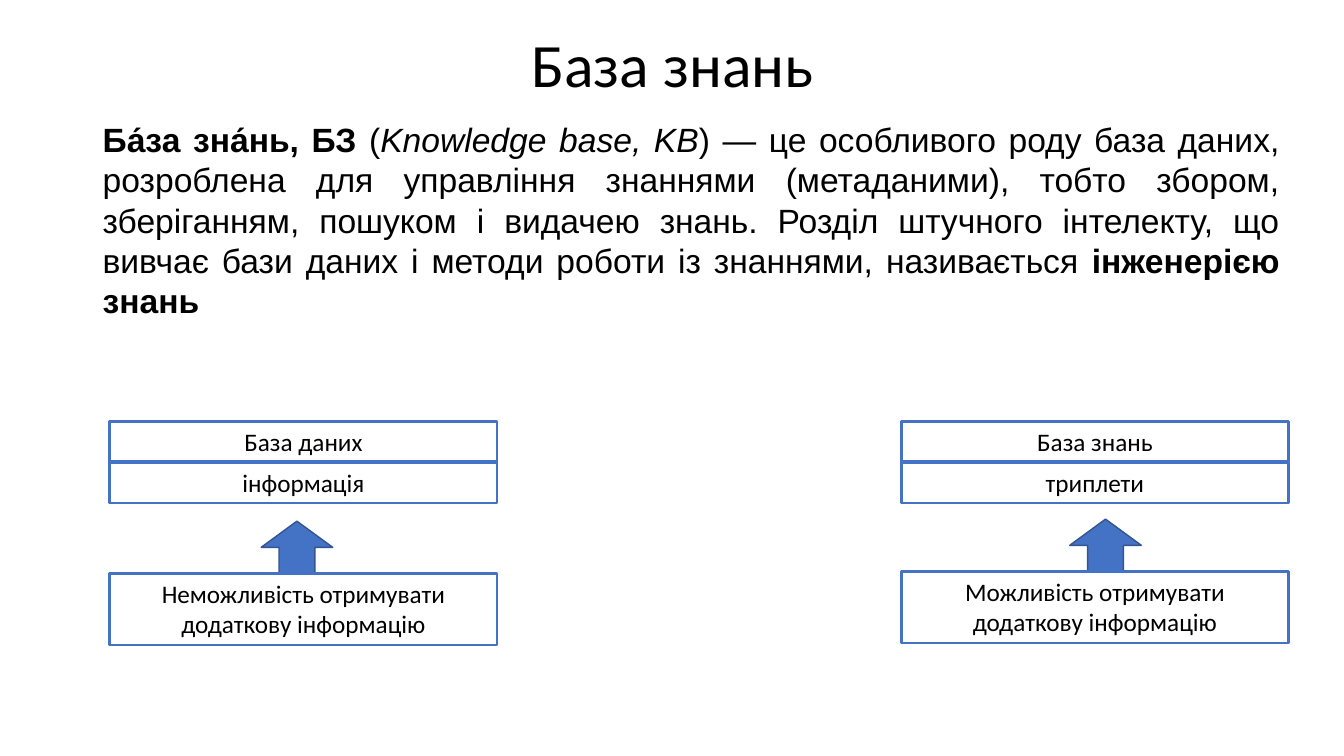
from dataclasses import dataclass

from pptx import Presentation
from pptx.dml.color import RGBColor
from pptx.enum.shapes import MSO_SHAPE
from pptx.enum.text import MSO_ANCHOR, MSO_AUTO_SIZE, PP_ALIGN
from pptx.shapes.autoshape import Shape
from pptx.slide import Slide
from pptx.util import Emu, Pt

RECTANGLE, UP_ARROW = MSO_SHAPE.RECTANGLE, MSO_SHAPE.UP_ARROW
CENTER, JUSTIFY = PP_ALIGN.CENTER, PP_ALIGN.JUSTIFY
TOP, MIDDLE = MSO_ANCHOR.TOP, MSO_ANCHOR.MIDDLE
FIT_SHAPE = MSO_AUTO_SIZE.SHAPE_TO_FIT_TEXT
NO_FIT = MSO_AUTO_SIZE.NONE

EMU_PER_PX = 9144  # 100 px to the inch
BLACK, BLUE, DARK_BLUE = "000000", "4472C4", "325491"

# Column geometry, in px
BOX_WIDTH, ROW_HEIGHT, NOTE_HEIGHT = 384, 40, 71
ROWS_TOP, ROW_STEP = 418, 41
ARROW_WIDTH, ARROW_HEIGHT = 71, 52


@dataclass(frozen=True)
class TextRun:
    text: str
    bold: bool = False
    italic: bool = False


@dataclass(frozen=True)
class TextStyle:
    font: str
    size: int
    align: PP_ALIGN = CENTER
    anchor: MSO_ANCHOR = TOP
    auto_size: MSO_AUTO_SIZE = FIT_SHAPE
    line_spacing: float = 1.0


@dataclass(frozen=True)
class Column:
    left: int
    rows: tuple[str, ...]
    note: str
    arrow_left: int
    arrow_top: int


TITLE_STYLE = TextStyle("Calibri", 44, CENTER, MIDDLE, NO_FIT, 0.9)
DEFINITION_STYLE = TextStyle("Arial", 24, JUSTIFY)
BOX_STYLE = TextStyle("Calibri", 18)

DEFINITION = (
    TextRun("Ба́за зна́нь, БЗ", bold=True),
    TextRun(" ("),
    TextRun("Knowledge base, KB", italic=True),
    TextRun(
        ") — це особливого роду база даних, розроблена для управління "
        "знаннями (метаданими), тобто збором, зберіганням, пошуком і видачею "
        "знань. Розділ штучного інтелекту, що вивчає бази даних і методи "
        "роботи із знаннями, називається "
    ),
    TextRun("інженерією знань", bold=True),
)

COLUMNS = (
    Column(109, ("База даних", "інформація"),
           "Неможливість отримувати додаткову інформацію", 259, 517),
    Column(894, ("База знань", "триплети"),
           "Можливість отримувати додаткову інформацію", 1061, 515),
)


def px(length: int) -> Emu:
    return Emu(length * EMU_PER_PX)


def color(value: str) -> RGBColor:
    return RGBColor.from_string(value)


def write_text(shape: Shape, runs: tuple[TextRun, ...], style: TextStyle) -> None:
    frame = shape.text_frame
    frame_format = {
        "word_wrap": True,
        "auto_size": style.auto_size,
        "vertical_anchor": style.anchor,
    }
    for name, value in frame_format.items():
        setattr(frame, name, value)
    paragraph = frame.paragraphs[0]
    paragraph.alignment = style.align
    paragraph.line_spacing = style.line_spacing
    for text_run in runs:
        run = paragraph.add_run()
        run.text = text_run.text
        font_format = {
            "name": style.font,
            "size": Pt(style.size),
            "bold": text_run.bold,
            "italic": text_run.italic,
        }
        for name, value in font_format.items():
            setattr(run.font, name, value)
        run.font.color.rgb = color(BLACK)


def add_text(slide: Slide, left: int, top: int, width: int, height: int,
             runs: tuple[TextRun, ...], style: TextStyle) -> None:
    box = slide.shapes.add_textbox(px(left), px(top), px(width), px(height))
    write_text(box, runs, style)


def add_outlined(slide: Slide, kind: MSO_SHAPE, left: int, top: int, width: int,
                 height: int, line: str, line_width: int) -> Shape:
    shape = slide.shapes.add_shape(kind, px(left), px(top), px(width), px(height))
    shape.shadow.inherit = False
    shape.line.color.rgb = color(line)
    shape.line.width = Pt(line_width)
    return shape


def add_box(slide: Slide, left: int, top: int, height: int, text: str) -> None:
    box = add_outlined(slide, RECTANGLE, left, top, BOX_WIDTH, height, BLUE, 2)
    box.fill.background()
    write_text(box, (TextRun(text),), BOX_STYLE)


def add_column(slide: Slide, column: Column) -> None:
    # Stacked name and content
    for index, text in enumerate(column.rows):
        add_box(slide, column.left, ROWS_TOP + index * ROW_STEP, ROW_HEIGHT, text)
    # Arrow rising from the note
    arrow = add_outlined(slide, UP_ARROW, column.arrow_left, column.arrow_top,
                         ARROW_WIDTH, ARROW_HEIGHT, DARK_BLUE, 1)
    arrow.fill.solid()
    arrow.fill.fore_color.rgb = color(BLUE)
    add_box(slide, column.left, column.arrow_top + ARROW_HEIGHT, NOTE_HEIGHT,
            column.note)


def main() -> None:
    presentation = Presentation()
    presentation.slide_width, presentation.slide_height = px(1333), px(750)
    slide = presentation.slides.add_slide(presentation.slide_layouts[6])

    # Title and definition
    add_text(slide, 92, 19, 1150, 96, (TextRun("База знань"),), TITLE_STYLE)
    add_text(slide, 92, 113, 1187, 212, DEFINITION, DEFINITION_STYLE)

    # Database compared with knowledge base
    for column in COLUMNS:
        add_column(slide, column)

    presentation.save("out.pptx")


if __name__ == "__main__":
    main()
